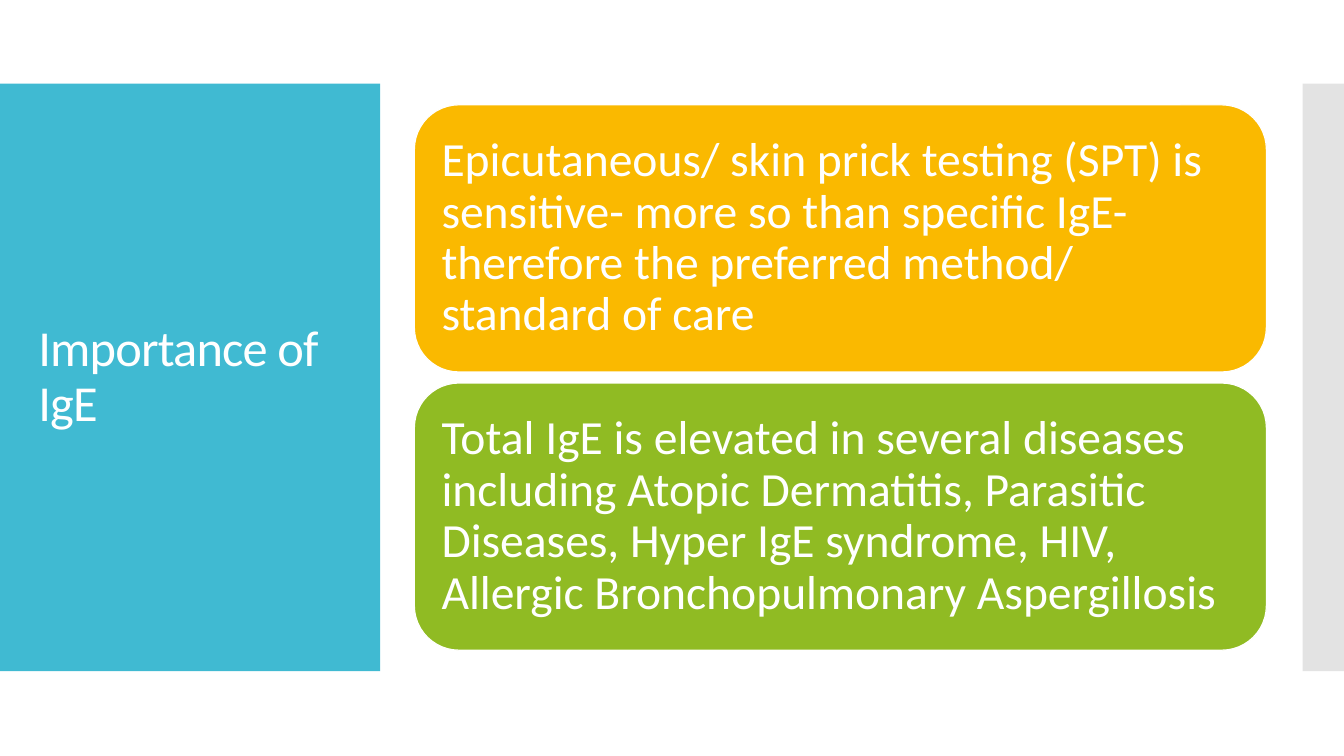
from pptx import Presentation
from pptx.dml.color import RGBColor
from pptx.enum import shapes as sh, text as tx
from pptx.util import Inches, Pt
from lxml import etree

# Content
TITLE = "Importance of IgE"
CARDS = [
    ("Epicutaneous/ skin prick testing (SPT) is sensitive- more so than "
     "specific IgE- therefore the preferred method/ standard of care", "gold"),
    ("Total IgE is elevated in several diseases including Atopic Dermatitis, "
     "Parasitic Diseases, Hyper IgE syndrome, HIV, Allergic "
     "Bronchopulmonary Aspergillosis", "green"),
]
THEME = {
    "teal": "40BAD2", "gray": "C8C8C8", "gold": "FAB900", "green": "90BB23",
    "white": "FFFFFF", "font": "Calibri", "title": 36, "body": 34,
}

# Layout in inches
WIDE, HIGH = 13.33, 7.5
BAND = (0.83, 5.83)
BARS = [(0, 3.77, "teal", 100), (12.92, 0.41, "gray", 50)]
LEFT, TOP, CARD_W, CARD_H, GAP = 4.11, 1.04, 8.45, 2.65, 0.11


def color(name):
    return RGBColor.from_string(THEME[name])


def box(slide, kind, place, fill):
    shape = slide.shapes.add_shape(kind, *map(Inches, place))
    shape.shadow.inherit = False
    shape.fill.solid()
    shape.fill.fore_color.rgb = color(fill)
    shape.line.fill.background()
    return shape


def write(shape, words, size, inset):
    frame = shape.text_frame
    frame.text = words
    form = {"word_wrap": True, "auto_size": tx.MSO_AUTO_SIZE.NONE,
            "vertical_anchor": tx.MSO_ANCHOR.MIDDLE}
    form.update({f"margin_{side}": Inches(gap) for side, gap in inset.items()})
    para = frame.paragraphs[0]
    para.alignment = tx.PP_ALIGN.LEFT
    para.line_spacing = 0.9
    font = para.runs[0].font
    font.color.rgb = color("white")
    looks = {"name": THEME["font"], "size": Pt(THEME[size])}
    for item, values in ((frame, form), (font, looks)):
        for key, value in values.items():
            setattr(item, key, value)
    return font


def main():
    deck = Presentation()
    deck.slide_width, deck.slide_height = Inches(WIDE), Inches(HIGH)
    slide = deck.slides.add_slide(deck.slide_layouts[5])

    # Side bars
    for left, width, fill, alpha in BARS:
        bar = box(slide, sh.MSO_SHAPE.RECTANGLE,
                  (left, BAND[0], width, BAND[1]), fill)
        if alpha < 100:
            tone = bar.fill._xPr.solidFill[0]
            etree.SubElement(tone, tone.tag.replace("srgbClr", "alpha"),
                             val=str(alpha * 1000))

    # Title, raised above the teal bar
    title = slide.shapes.title
    place = dict(zip(("left", "top", "width", "height"),
                     (0.28, 1.23, 3.22, 5.03)))
    for key, value in place.items():
        setattr(title, key, Inches(value))
    font = write(title, TITLE, "title",
                 {"left": 0.1, "right": 0.1, "top": 0.05, "bottom": 0.05})
    font._element.set("spc", "-60")
    slide.shapes._spTree.append(title._element)

    # Cards
    for row, (words, fill) in enumerate(CARDS):
        top = TOP + row * (CARD_H + GAP)
        card = box(slide, sh.MSO_SHAPE.ROUNDED_RECTANGLE,
                   (LEFT, top, CARD_W, CARD_H), fill)
        card.line.color.rgb = color("white")
        card.line.width = Pt(0.85)
        write(card, words, "body",
              dict.fromkeys(("left", "right", "top", "bottom"), 0.14))

    deck.save("out.pptx")


if __name__ == "__main__":
    main()
